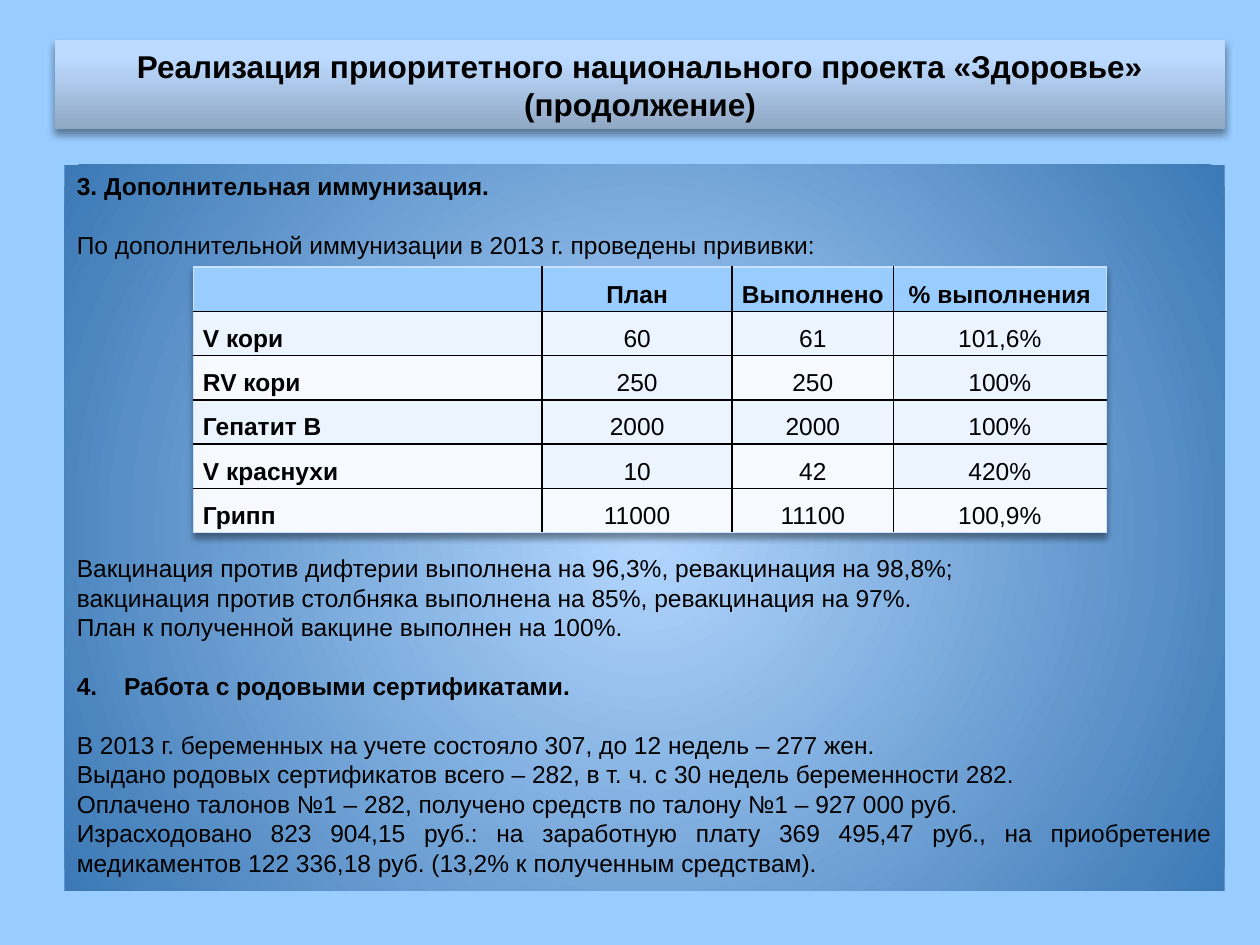
from dataclasses import dataclass

import pptx
import pptx.dml.color
import pptx.enum.shapes
import pptx.enum.text
import pptx.oxml
import pptx.oxml.ns
import pptx.util
from lxml import etree

Pt = pptx.util.Pt
Align = pptx.enum.text.PP_ALIGN
Anchor = pptx.enum.text.MSO_ANCHOR
NAMESPACE = pptx.oxml.ns.nsdecls("a")


@dataclass(frozen=True)
class Theme:
    font: str = "Arial"
    title_size: float = 18
    body_size: float = 14
    line: float = 16.8
    ink: str = "000000"
    sky: str = "99CCFF"
    edge: str = "CAE2FF"
    band: str = "ECF4FF"
    pale: str = "F6FAFF"
    title_stops: tuple = ((0, "91A8C4"), (80, "BCDAFF"), (100, "BEDBFF"))
    panel_stops: tuple = ((0, "B4D7FF"), (100, "3C79B5"))


THEME = Theme()
LINEAR = '<a:lin ang="16200000" scaled="0"/>'
RADIAL = ('<a:path path="circle">'
          '<a:fillToRect l="50000" t="50000" r="50000" b="50000"/></a:path>')
SHADOW = (f'<a:effectLst {NAMESPACE}><a:outerShdw blurRad="50800" dist="38100" '
          'dir="5400000" rotWithShape="0"><a:srgbClr val="000000">'
          '<a:alpha val="40000"/></a:srgbClr></a:outerShdw></a:effectLst>')

# Text, blank lines above it, and format
BODY = [
    ("3. Дополнительная иммунизация.", 0, {"bold": True}),
    ("По дополнительной иммунизации в 2013 г. проведены прививки:", 1, {}),
    ("Вакцинация против дифтерии выполнена на 96,3%, ревакцинация на 98,8%;", 10, {}),
    ("вакцинация против столбняка выполнена на 85%, ревакцинация на 97%.", 0, {}),
    ("План к полученной вакцине выполнен на 100%.", 0, {}),
    ("Работа с родовыми сертификатами.", 1, {"bold": True, "number": 4}),
    ("В 2013 г. беременных на учете состояло 307, до 12 недель – 277 жен.", 1, {}),
    ("Выдано родовых сертификатов всего – 282, в т. ч. с 30 недель беременности 282.", 0, {}),
    ("Оплачено талонов №1 – 282, получено средств по талону №1 – 927 000 руб.", 0, {}),
    ("Израсходовано 823 904,15 руб.: на заработную плату 369 495,47 руб., "
     "на приобретение медикаментов 122 336,18 руб. (13,2% к полученным средствам).",
     0, {"align": Align.JUSTIFY}),
]
VACCINATIONS = [
    ("", "План", "Выполнено", "% выполнения"),
    ("V кори", "60", "61", "101,6%"),
    ("RV кори", "250", "250", "100%"),
    ("Гепатит В", "2000", "2000", "100%"),
    ("V краснухи", "10", "42", "420%"),
    ("Грипп", "11000", "11100", "100,9%"),
]


def rgb(value):
    return pptx.dml.color.RGBColor.from_string(value)


def write(para, text, *, size=THEME.body_size, bold=False, align=Align.LEFT,
          before=0, spacing=None, number=None):
    if number:
        props = para._p.get_or_add_pPr()
        props.set("marL", str(Pt(27)))
        props.set("indent", str(Pt(-27)))
        etree.SubElement(props, pptx.oxml.ns.qn("a:buAutoNum"),
                         type="arabicPeriod", startAt=str(number))
    para.alignment = align
    if before:
        para.space_before = Pt(before)
    if spacing:
        para.line_spacing = spacing
    span = para.add_run()
    span.text = text
    span.font.name = THEME.font
    span.font.size = Pt(size)
    span.font.bold = bold
    span.font.color.rgb = rgb(THEME.ink)


def add_panel(page, box, stops, direction, anchor):
    """Add a borderless gradient rectangle that holds text."""
    panel = page.shapes.add_shape(pptx.enum.shapes.MSO_SHAPE.RECTANGLE,
                                  *map(Pt, box))
    panel.shadow.inherit = False
    panel.line.fill.background()
    marks = "".join(f'<a:gs pos="{place * 1000}"><a:srgbClr val="{color}"/></a:gs>'
                    for place, color in stops)
    gradient = pptx.oxml.parse_xml(
        f'<a:gradFill {NAMESPACE} rotWithShape="1"><a:gsLst>{marks}</a:gsLst>'
        f'{direction}</a:gradFill>')
    panel._element.spPr.find(pptx.oxml.ns.qn("a:prstGeom")).addnext(gradient)
    frame = panel.text_frame
    frame.word_wrap = True
    frame.auto_size = pptx.enum.text.MSO_AUTO_SIZE.SHAPE_TO_FIT_TEXT
    frame.vertical_anchor = anchor
    return panel


def add_title(page, box):
    panel = add_panel(page, box, THEME.title_stops, LINEAR, Anchor.MIDDLE)
    props = panel._element.spPr
    props.replace(props.find(pptx.oxml.ns.qn("a:effectLst")),
                  pptx.oxml.parse_xml(SHADOW))
    write(panel.text_frame.paragraphs[0],
          "Реализация приоритетного национального проекта «Здоровье» (продолжение)",
          size=THEME.title_size, bold=True, align=Align.CENTER)


def add_body(page, box):
    frame = add_panel(page, box, THEME.panel_stops, RADIAL, Anchor.TOP).text_frame
    for index, (text, gap, style) in enumerate(BODY):
        para = frame.add_paragraph() if index else frame.paragraphs[0]
        write(para, text, before=gap * THEME.line, **style)


def set_borders(cell, colors):
    """Draw 1 pt borders, in the order left, right, top, bottom."""
    props = cell._tc.get_or_add_tcPr()
    for index, (side, color) in enumerate(zip("LRTB", colors)):
        props.insert(index, pptx.oxml.parse_xml(
            f'<a:ln{side} {NAMESPACE} w="{Pt(1)}"><a:solidFill>'
            f'<a:srgbClr val="{color}"/></a:solidFill></a:ln{side}>'))


def cell_fill(row, column, last_row):
    if row == 0:
        return THEME.sky
    if row == last_row:
        return THEME.pale
    return THEME.band if row % 2 or column % 2 else THEME.pale


def add_vaccinations(page, box, widths):
    last_row, last_column = len(VACCINATIONS) - 1, len(widths) - 1
    table = page.shapes.add_table(last_row + 1, last_column + 1,
                                  *map(Pt, box)).table
    table._tbl.tblPr.insert(0, pptx.oxml.parse_xml(SHADOW))
    for column, width in zip(table.columns, widths):
        column.width = Pt(width)
    for row, values in enumerate(VACCINATIONS):
        table.rows[row].height = Pt(box[3] / len(VACCINATIONS))
        for column, value in enumerate(values):
            cell = table.cell(row, column)
            cell.margin_left = cell.margin_right = Pt(5.4)
            cell.margin_top = cell.margin_bottom = 0
            cell.fill.solid()
            cell.fill.fore_color.rgb = rgb(cell_fill(row, column, last_row))
            outer = (column == 0, column == last_column, row == 0, row == last_row)
            set_borders(cell, [THEME.edge if side else THEME.ink for side in outer])
            write(cell.text_frame.paragraphs[0], value, spacing=1.5,
                  bold=row == 0 or column == 0,
                  align=Align.CENTER if column else Align.JUSTIFY)


def main():
    deck = pptx.Presentation()
    deck.slide_width, deck.slide_height = Pt(720), Pt(540)
    page = deck.slides.add_slide(deck.slide_layouts[6])
    page.background.fill.solid()
    page.background.fill.fore_color.rgb = rgb(THEME.sky)
    add_title(page, (31.2, 22.9, 669, 51))
    add_body(page, (36.8, 94.3, 663, 414.7))
    add_vaccinations(page, (110.6, 152.6, 521.6, 151.8),
                     (199.2, 108.6, 92.2, 121.6))
    deck.save("out.pptx")


if __name__ == "__main__":
    main()
